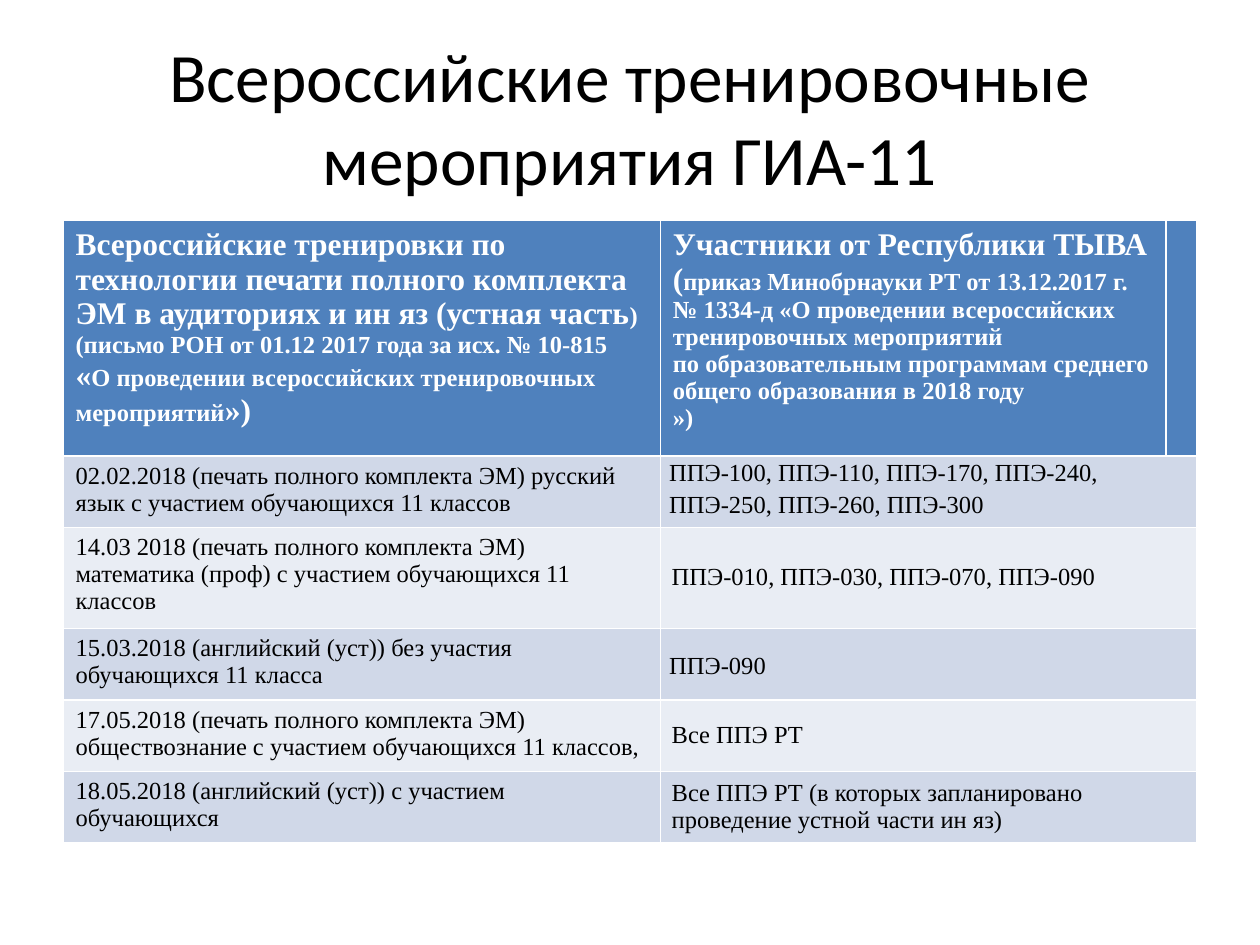
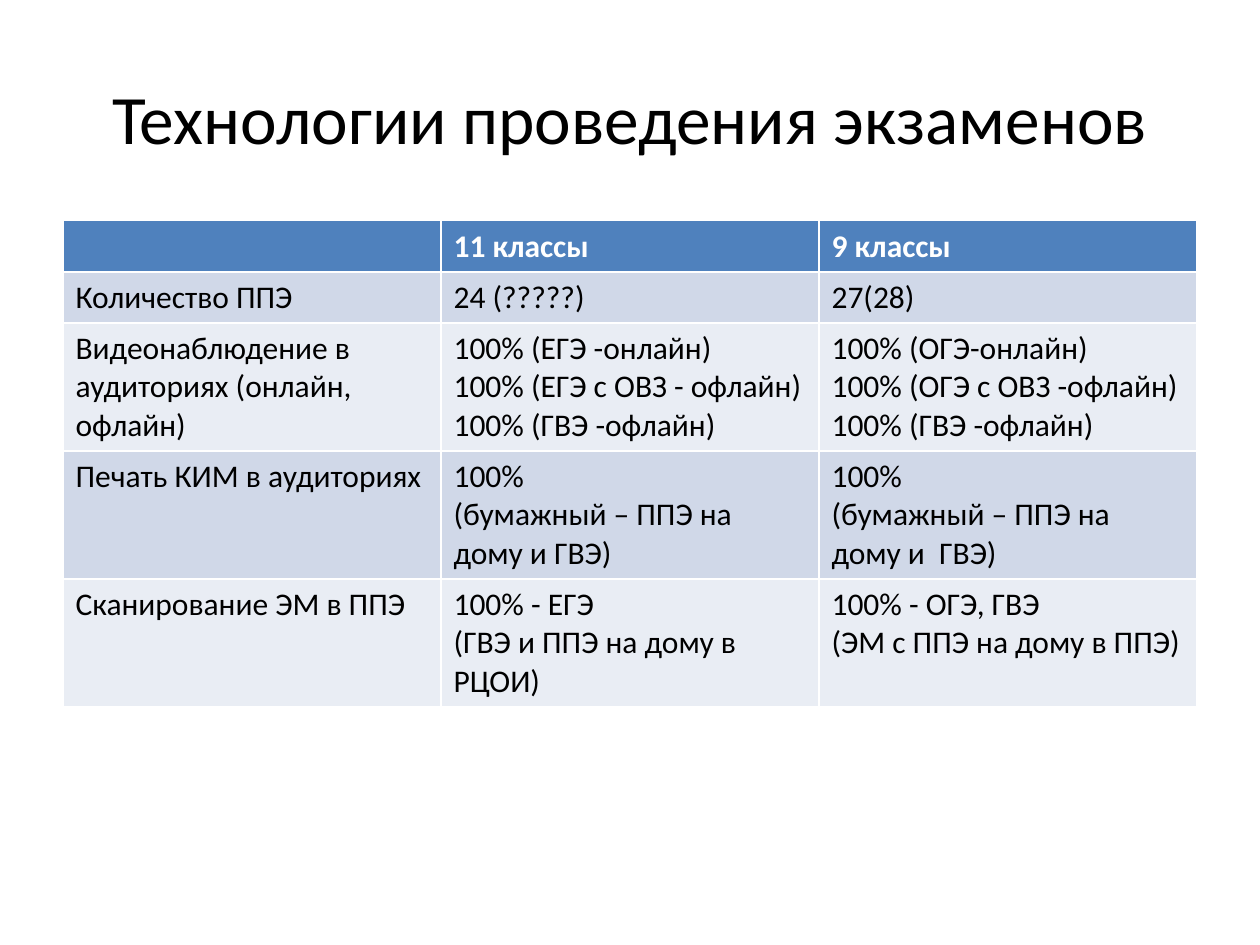
from pptx import Presentation
from pptx.dml.color import RGBColor
from pptx.enum.text import MSO_ANCHOR, PP_ALIGN
from pptx.util import Cm, Pt

CENTER = PP_ALIGN.CENTER
TOP, MIDDLE = MSO_ANCHOR.TOP, MSO_ANCHOR.MIDDLE

COLORS = {
    "header": "4F81BD",
    "odd_row": "D0D8E8",
    "even_row": "E9EDF4",
    "header_text": "FFFFFF",
    "text": "000000",
}
TITLE_FONT, TRAINING_FONT = "Calibri", "Times New Roman"
LEFT, WIDTH = 1.27, 22.86
TITLE_TOP, TITLE_HEIGHT, TITLE_SIZE = 0.76, 3.18, 39.6
TABLE_TOP = 4.45
TIGHT_INSET, INDENTED_INSET = 0.18, 0.23

TRAINING = {
    "title": "Всероссийские тренировочные мероприятия ГИА-11",
    "font": TRAINING_FONT,
    "size": 14,
    "columns": [12.04, 10.2, 0.62],
    "heights": [4.37, 1.35, 1.91, 1.35, 1.35, 1.35],
    "rows": [
        [
            [
                [
                    ("Всероссийские тренировки по технологии печати полного комплекта "
                     "ЭМ в аудиториях и ин яз (устная часть", 18),
                    (") (письмо РОН от 01.12 2017 года за исх. № 10-815", 14),
                ],
                [
                    ("«", 18),
                    ("О проведении всероссийских тренировочных мероприятий", 14),
                    ("»)", 18),
                ],
            ],
            [
                [
                    ("Участники от Республики ТЫВА (", 18),
                    ("приказ Минобрнауки РТ от 13.12.2017 г. № 1334-д "
                     "«О проведении всероссийских тренировочных мероприятий", 14),
                ],
                "по образовательным программам среднего общего образования в 2018 году",
                "»)",
            ],
            [],
        ],
        [
            ["02.02.2018 (печать полного комплекта ЭМ) русский язык "
             "с участием обучающихся 11 классов"],
            ["ППЭ-100, ППЭ-110, ППЭ-170, ППЭ-240, ППЭ-250, ППЭ-260, ППЭ-300"],
        ],
        [
            ["14.03 2018 (печать полного комплекта ЭМ) математика (проф) "
             "с участием обучающихся 11 классов"],
            ["ППЭ-010, ППЭ-030, ППЭ-070, ППЭ-090"],
        ],
        [
            ["15.03.2018 (английский (уст)) без участия обучающихся 11 класса"],
            ["ППЭ-090"],
        ],
        [
            ["17.05.2018 (печать полного комплекта ЭМ) обществознание "
             "с участием обучающихся 11 классов,"],
            ["Все ППЭ РТ"],
        ],
        [
            ["18.05.2018 (английский (уст)) с участием обучающихся"],
            ["Все ППЭ РТ (в которых запланировано проведение устной части ин яз)"],
        ],
    ],
}

PARTICIPANT_STYLES = [
    (TOP, TIGHT_INSET, 1.15),
    (MIDDLE, INDENTED_INSET, Pt(15.1)),
    (MIDDLE, TIGHT_INSET, 1.15),
    (MIDDLE, INDENTED_INSET, Pt(15.1)),
    (MIDDLE, INDENTED_INSET, Pt(15.1)),
]

TECHNOLOGY = {
    "title": "Технологии проведения экзаменов",
    "font": TITLE_FONT,
    "size": 18,
    "columns": [WIDTH / 3] * 3,
    "heights": [1.03, 1.03, 2.58, 2.58, 2.58],
    "rows": [
        [[], ["11 классы"], ["9 классы"]],
        [["Количество ППЭ"], ["24 (?????)"], ["27(28)"]],
        [
            ["Видеонаблюдение в аудиториях (онлайн, офлайн)"],
            ["100% (ЕГЭ -онлайн)", "100% (ЕГЭ с ОВЗ - офлайн)", "100% (ГВЭ -офлайн)"],
            ["100% (ОГЭ-онлайн)", "100% (ОГЭ с ОВЗ -офлайн)", "100% (ГВЭ -офлайн)"],
        ],
        [
            ["Печать КИМ в аудиториях"],
            ["100%", "(бумажный – ППЭ на дому и ГВЭ)"],
            ["100%", "(бумажный – ППЭ на дому и  ГВЭ)"],
        ],
        [
            ["Сканирование ЭМ в ППЭ"],
            ["100% - ЕГЭ", "(ГВЭ и ППЭ на дому в РЦОИ)"],
            ["100% - ОГЭ, ГВЭ", "(ЭМ с ППЭ на дому в ППЭ)"],
        ],
    ],
}


def format_font(font, name, size, color, bold=False):
    font.name = name
    font.size = Pt(size)
    font.bold = bold
    font.color.rgb = RGBColor.from_string(COLORS[color])


def add_title(page, text):
    box = page.shapes.add_textbox(Cm(LEFT), Cm(TITLE_TOP), Cm(WIDTH), Cm(TITLE_HEIGHT))
    frame = box.text_frame
    frame.word_wrap = True
    frame.vertical_anchor = MIDDLE
    frame.text = text
    para = frame.paragraphs[0]
    para.alignment = CENTER
    format_font(para.runs[0].font, TITLE_FONT, TITLE_SIZE, "text")


def fill_cell(cell, paragraphs, row, font, size):
    is_header = row == 0
    shade = "header" if is_header else "odd_row" if row % 2 else "even_row"
    cell.fill.solid()
    cell.fill.fore_color.rgb = RGBColor.from_string(COLORS[shade])
    frame = cell.text_frame
    for index, content in enumerate(paragraphs):
        para = frame.add_paragraph() if index else frame.paragraphs[0]
        pieces = [(content, size)] if isinstance(content, str) else content
        for text, piece_size in pieces:
            span = para.add_run()
            span.text = text
            format_font(span.font, font, piece_size,
                        "header_text" if is_header else "text", is_header)


def add_table_page(deck, content):
    page = deck.slides.add_slide(deck.slide_layouts[6])
    add_title(page, content["title"])
    columns, heights = content["columns"], content["heights"]
    table = page.shapes.add_table(
        len(heights), len(columns), Cm(LEFT), Cm(TABLE_TOP), Cm(WIDTH), Cm(sum(heights))
    ).table
    for column, width in zip(table.columns, columns):
        column.width = Cm(width)
    for row, height in zip(table.rows, heights):
        row.height = Cm(height)
    for row, cells in enumerate(content["rows"]):
        for column, paragraphs in enumerate(cells):
            fill_cell(table.cell(row, column), paragraphs, row,
                      content["font"], content["size"])
    return table


def style_participants(table):
    for row, (anchor, inset, spacing) in enumerate(PARTICIPANT_STYLES, start=1):
        cell = table.cell(row, 1)
        cell.merge(table.cell(row, 2))
        cell.vertical_anchor = anchor
        cell.margin_left, cell.margin_right = Cm(inset), Cm(TIGHT_INSET)
        cell.margin_top = cell.margin_bottom = 0
        cell.text_frame.paragraphs[0].line_spacing = spacing


def main():
    deck = Presentation()
    deck.slide_width, deck.slide_height = Cm(25.4), Cm(19.05)
    style_participants(add_table_page(deck, TRAINING))
    add_table_page(deck, TECHNOLOGY)
    deck.save("out.pptx")


if __name__ == "__main__":
    main()
